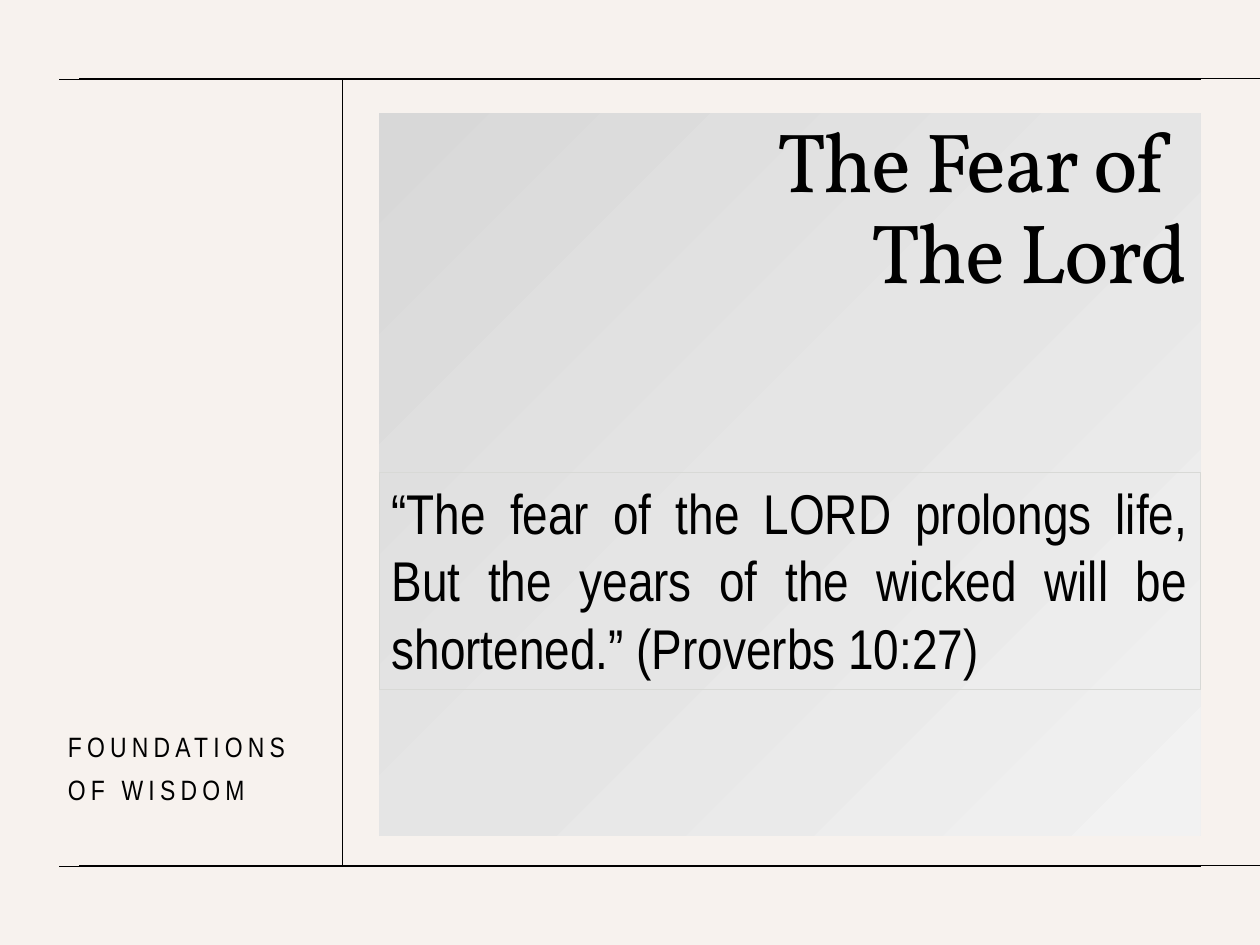
import copy

import pptx
import pptx.dml.color
import pptx.enum.shapes
import pptx.enum.text
import pptx.oxml.ns
import pptx.util
from lxml import etree

Inches = pptx.util.Inches
Pt = pptx.util.Pt
RGBColor = pptx.dml.color.RGBColor
PP_ALIGN = pptx.enum.text.PP_ALIGN
MSO_ANCHOR = pptx.enum.text.MSO_ANCHOR
qn = pptx.oxml.ns.qn

BACKGROUND = RGBColor(0xF7, 0xF2, 0xEE)
BLACK = RGBColor(0, 0, 0)
QUOTE_BORDER = RGBColor(0xD8, 0xD9, 0xD6)
PANEL_STOPS = [
    (0, RGBColor(0xD8, 0xD8, 0xD8)),
    (0.5, RGBColor(0xE5, 0xE5, 0xE5)),
    (1, RGBColor(0xF2, 0xF2, 0xF2)),
]

WIDTH, HEIGHT = 10, 7.5
RULE_TOP, RULE_BOTTOM = 0.63, 6.88
RULE_LEFT, DIVIDER = 0.47, 2.72
PANEL_LEFT, PANEL_WIDTH = 3.01, 6.52
PANEL_RIGHT = PANEL_LEFT + PANEL_WIDTH


def write_text(shape, text, font_name, size, alignment, anchor, tracking=0):
    """Fill a shape with one paragraph; tracking is letter spacing in points."""
    frame = shape.text_frame
    frame.word_wrap = True
    frame.auto_size = pptx.enum.text.MSO_AUTO_SIZE.NONE
    frame.vertical_anchor = anchor
    paragraph = frame.paragraphs[0]
    paragraph.text = text
    paragraph.alignment = alignment
    paragraph.font.name = font_name
    paragraph.font.size = Pt(size)
    paragraph.font.color.rgb = BLACK
    if tracking:
        for run in paragraph.runs:
            run.font._element.set("spc", str(tracking * 100))
    return paragraph


presentation = pptx.Presentation()
presentation.slide_width = Inches(WIDTH)
presentation.slide_height = Inches(HEIGHT)
slide = presentation.slides.add_slide(presentation.slide_layouts[5])
slide.background.fill.solid()
slide.background.fill.fore_color.rgb = BACKGROUND

# Title on its gradient panel
title = slide.shapes.title
title.left, title.top = Inches(PANEL_LEFT), Inches(0.9)
title.width, title.height = Inches(PANEL_WIDTH), Inches(5.73)
title.fill.gradient()
title.fill.gradient_angle = 315
stops = title.fill.gradient_stops
first_stop = stops[0]._gs
first_stop.addnext(copy.deepcopy(first_stop))
for stop, (position, color) in zip(title.fill.gradient_stops, PANEL_STOPS):
    stop.position = position
    stop.color.rgb = color
paragraph = write_text(title, "The Fear of \vThe Lord", "Vollkorn", 48,
                       PP_ALIGN.RIGHT, MSO_ANCHOR.TOP, tracking=-1)
paragraph.line_spacing = 0.9

# Series name in the left column
series = slide.shapes.add_textbox(Inches(0.44), Inches(3.34), Inches(2.12), Inches(3.11))
paragraph = write_text(series, "FOUNDATIONS OF WISDOM", "Arial Narrow", 16,
                       PP_ALIGN.LEFT, MSO_ANCHOR.BOTTOM, tracking=3)
paragraph.line_spacing = 1.3
paragraph.space_before = Pt(10)

# Each horizontal rule is doubled by one that runs on to the slide's edge
rules = [(DIVIDER, RULE_TOP, DIVIDER, RULE_BOTTOM)]
for y in (RULE_TOP, RULE_BOTTOM):
    rules.append((RULE_LEFT, y, PANEL_RIGHT, y))
    rules.append((0.63, y - 0.01, WIDTH, y - 0.01))
for ends in rules:
    rule = slide.shapes.add_connector(
        pptx.enum.shapes.MSO_CONNECTOR.STRAIGHT, *map(Inches, ends))
    rule.line.color.rgb = BLACK
    rule.line.width = Pt(0.5)
    etree.SubElement(rule._element.spPr, qn("a:effectLst"))

# Verse
verse = slide.shapes.add_textbox(Inches(PANEL_LEFT), Inches(3.75),
                                 Inches(PANEL_WIDTH), Inches(1.72))
verse.line.color.rgb = QUOTE_BORDER
verse.line.width = Pt(0.75)
write_text(verse, "“The fear of the LORD prolongs life, But the years of the wicked "
           "will be shortened.” (Proverbs 10:27)", "Arial Narrow", 32,
           PP_ALIGN.JUSTIFY, MSO_ANCHOR.TOP)

presentation.save("out.pptx")
